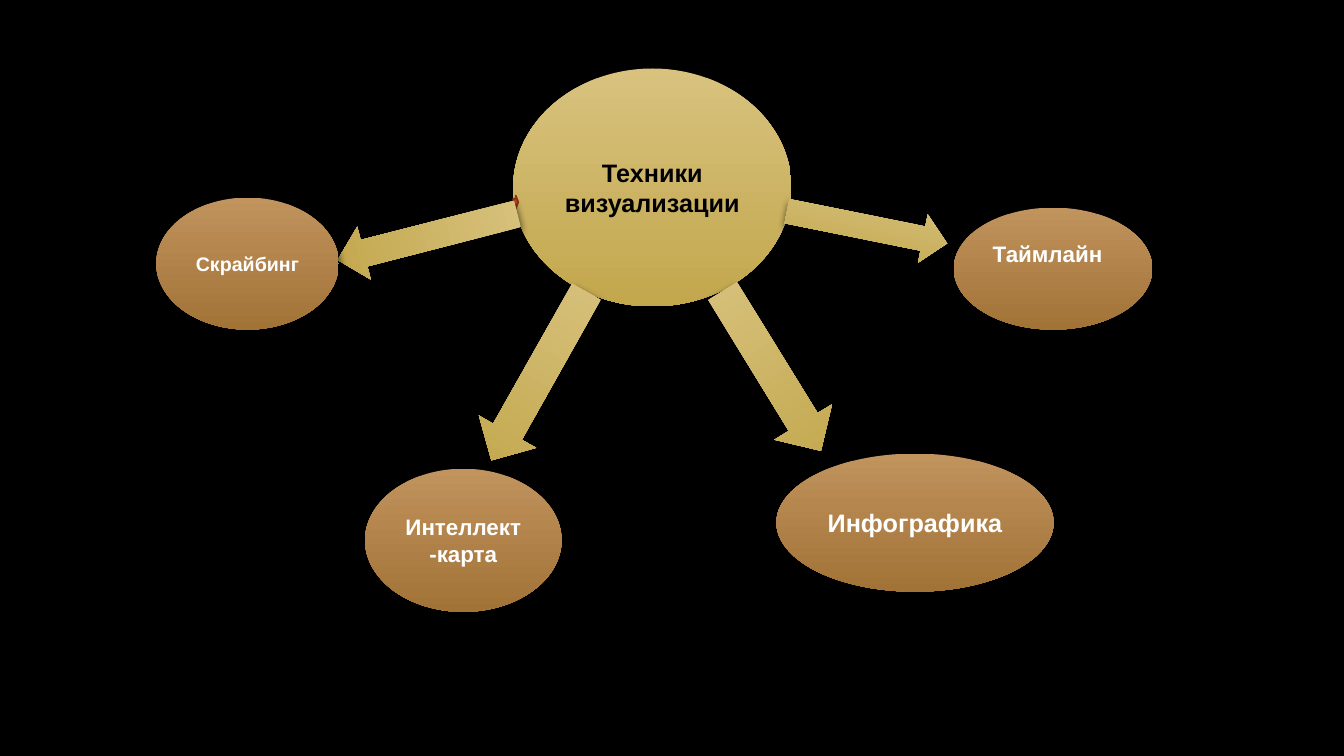
"""Build a slide with a hub and four visualisation techniques around it."""
from lxml import etree
from pptx import Presentation
from pptx.dml.color import RGBColor
from pptx.enum.shapes import MSO_SHAPE
from pptx.enum.text import MSO_ANCHOR, PP_ALIGN
from pptx.oxml.ns import qn
from pptx.util import Inches, Pt

OVAL, RIGHT, DOWN = MSO_SHAPE.OVAL, MSO_SHAPE.RIGHT_ARROW, MSO_SHAPE.DOWN_ARROW
LEFT, CENTER, MIDDLE = PP_ALIGN.LEFT, PP_ALIGN.CENTER, MSO_ANCHOR.MIDDLE

WIDE, HIGH = 13.33, 7.5
THEME = {
    "back": "000000", "font": "Arial",
    "gold": ("D8C27E", "C2A74D"), "bronze": ("C1935D", "A17337"),
    "mark": "BC451B", "edge": "8B3314", "dark": "000000", "light": "FFFFFF",
    "big": 18, "mid": 16, "small": 14, "rim": 1.25,
    "shadow": {"blur": 6, "dist": 3, "alpha": 75},
}

HUB = ("Техники визуализации", (5.09, 0.68, 2.76, 2.36), "big", {})
MARK = (5.09, 1.94, 0.05, 0.13)
RAYS = [
    (RIGHT, (7.79, 2.01, 1.62, 0.49), 11.4),
    (DOWN, (3.97, 1.43, 0.54, 1.84), 75.6),
    (DOWN, (5.02, 2.77, 0.65, 1.92), 29.4),
    (DOWN, (7.32, 2.75, 0.67, 1.86), 328.4),
]
TOPICS = [
    ("Таймлайн", (9.46, 2.06, 1.97, 1.21), "mid",
     {"align": LEFT, "foot": 0.34}),
    ("Скрайбинг", (1.55, 1.96, 1.81, 1.31), "small", {}),
    ("Интеллект-карта", (3.62, 4.65, 1.95, 1.42), "mid", {}),
    ("Инфографика", (7.7, 4.5, 2.75, 1.37), "big", {}),
]


def tint(name):
    return RGBColor.from_string(name)


def put(slide, kind, box):
    shape = slide.shapes.add_shape(kind, *map(Inches, box))
    shape.shadow.inherit = False
    return shape


def shade(shape):
    look = THEME["shadow"]
    glow = etree.SubElement(
        shape._element.spPr.find(qn("a:effectLst")), qn("a:outerShdw"),
        blurRad=str(Pt(look["blur"])), dist=str(Pt(look["dist"])),
        dir=str(90 * 60000), rotWithShape="0")
    tone = etree.SubElement(glow, qn("a:srgbClr"), val=THEME["dark"])
    etree.SubElement(tone, qn("a:alpha"), val=str(look["alpha"] * 1000))


def blend(slide, kind, box, pair, turn=0):
    shape = put(slide, kind, box)
    shape.rotation = turn
    shape.line.fill.background()
    shape.fill.gradient()
    shape.fill.gradient_angle = 270
    for stop, name, place in zip(shape.fill.gradient_stops, THEME[pair], (0, 1)):
        stop.color.rgb = tint(name)
        stop.position = place
    shade(shape)
    return shape


def bubble(slide, item, pair, ink):
    text, box, size, extra = item
    frame = blend(slide, OVAL, box, pair).text_frame
    form = {"word_wrap": True, "vertical_anchor": MIDDLE,
            "margin_bottom": Inches(extra.get("foot", 0.05))}
    for key, value in form.items():
        setattr(frame, key, value)
    para = frame.paragraphs[0]
    para.alignment = extra.get("align", CENTER)
    run = para.add_run()
    run.text = text
    form = {"name": THEME["font"], "size": Pt(THEME[size]), "bold": True}
    for key, value in form.items():
        setattr(run.font, key, value)
    run.font.color.rgb = tint(THEME[ink])


def main():
    deck = Presentation()
    deck.slide_width, deck.slide_height = Inches(WIDE), Inches(HIGH)
    slide = deck.slides.add_slide(deck.slide_layouts[6])
    slide.background.fill.solid()
    slide.background.fill.fore_color.rgb = tint(THEME["back"])

    bubble(slide, HUB, "gold", "dark")
    mark = put(slide, RIGHT, MARK)
    mark.fill.solid()
    mark.fill.fore_color.rgb = tint(THEME["mark"])
    mark.line.color.rgb = tint(THEME["edge"])
    mark.line.width = Pt(THEME["rim"])
    for kind, box, turn in RAYS:
        blend(slide, kind, box, "gold", turn)
    for item in TOPICS:
        bubble(slide, item, "bronze", "light")
    deck.save("out.pptx")


if __name__ == "__main__":
    main()
